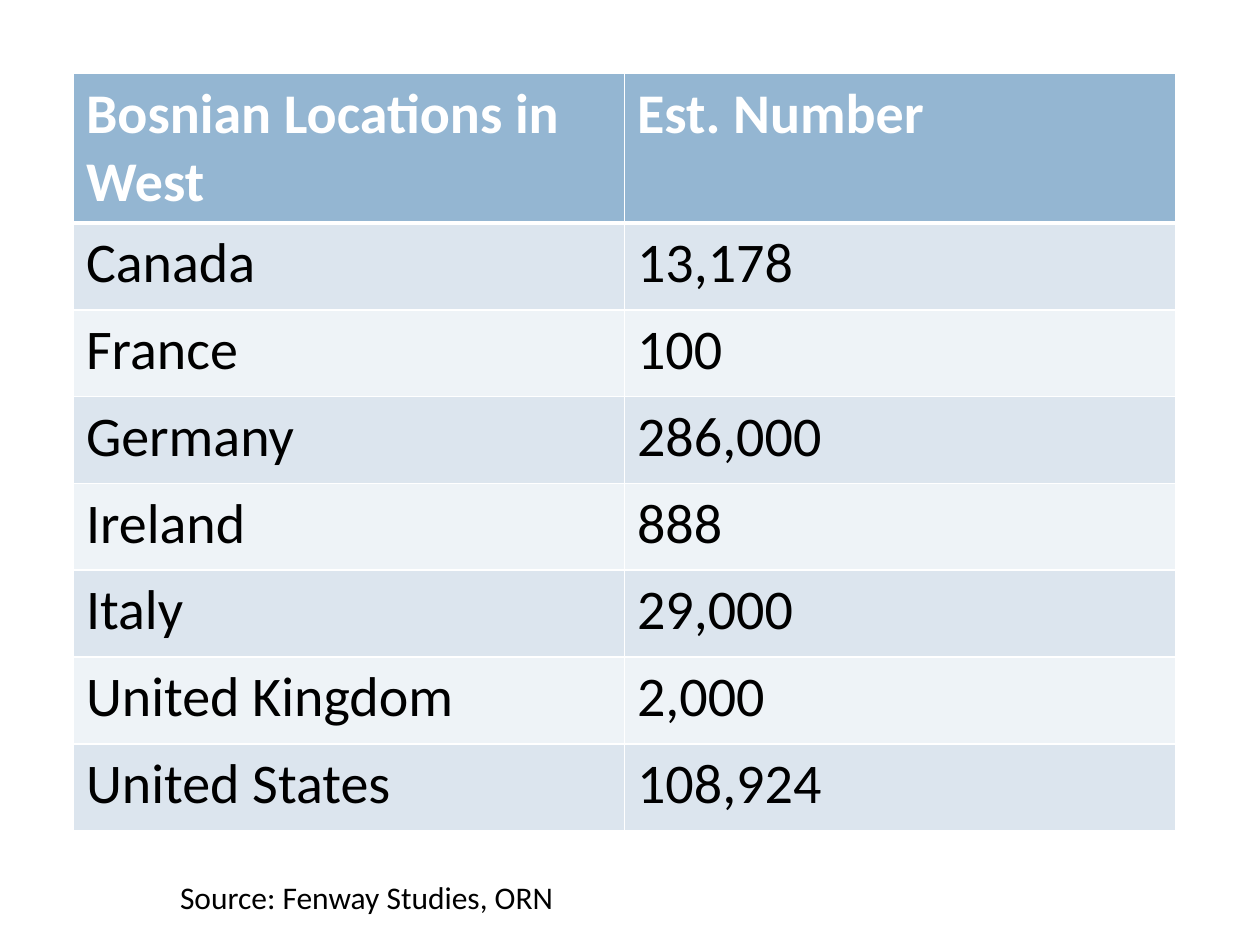
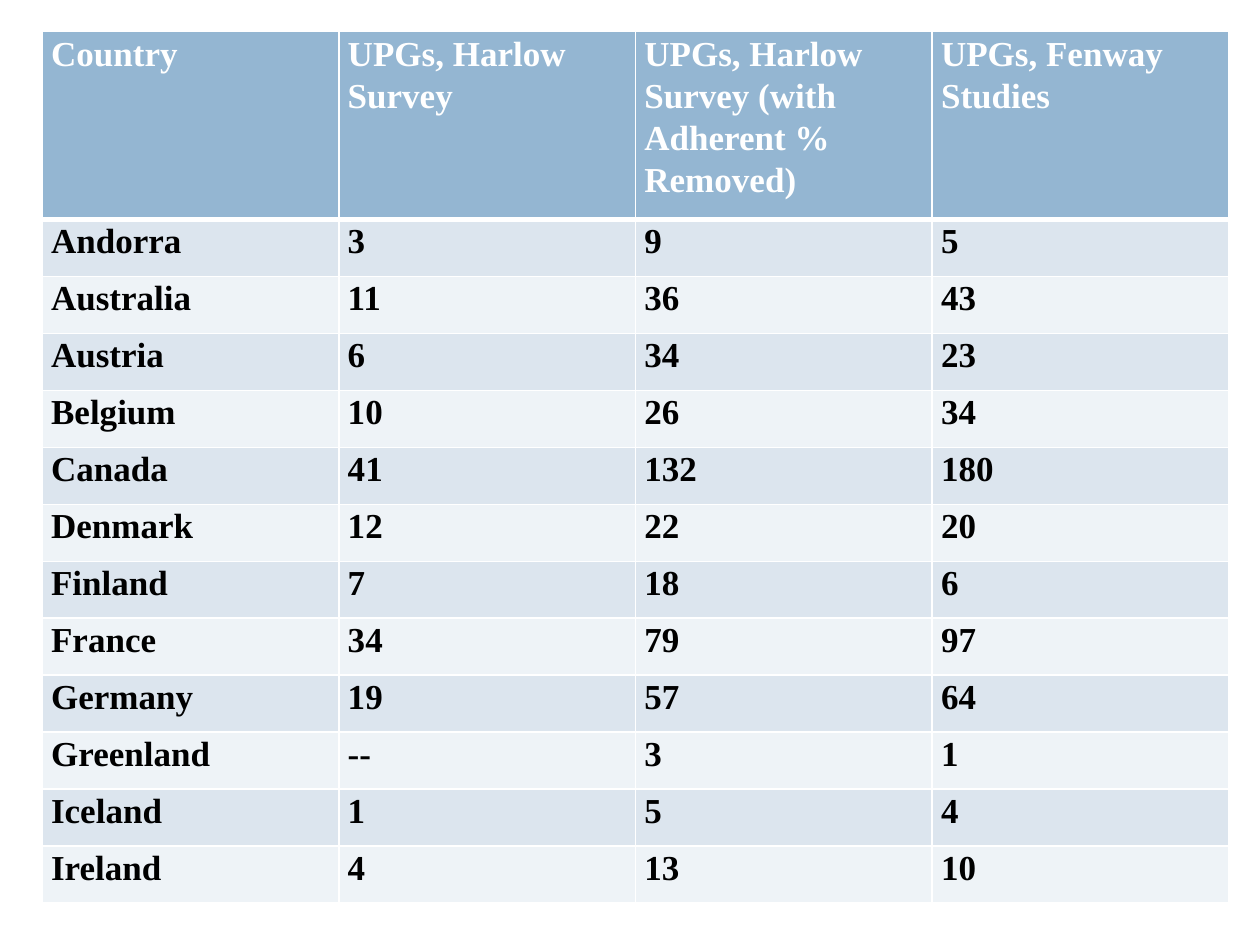
from dataclasses import dataclass

from lxml.etree import SubElement
from pptx import Presentation
from pptx.dml.color import RGBColor as RGB
from pptx.enum.text import MSO_AUTO_SIZE as AutoSize
from pptx.oxml.ns import qn
from pptx.util import Cm, Pt


@dataclass(frozen=True)
class Theme:
    white: str = "FFFFFF"
    text: str = "000000"
    header: str = "94B6D2"
    bands: tuple = ("DCE5EE", "EEF3F7")
    sans: str = "Calibri"
    serif: str = "Times New Roman"
    location_size: int = 32
    upg_size: int = 20
    upg_leading: int = 24
    source_size: int = 18
    rule: int = 1
    header_rule: int = 3


THEME = Theme()

LOCATIONS = [
    ("Bosnian Locations in West", "Est. Number"),
    ("Canada", "13,178"),
    ("France", "100"),
    ("Germany", "286,000"),
    ("Ireland", "888"),
    ("Italy", "29,000"),
    ("United Kingdom", "2,000"),
    ("United States", "108,924"),
]

UPGS = [
    ("Country", "UPGs, Harlow Survey",
     "UPGs, Harlow Survey (with Adherent % Removed)", "UPGs, Fenway Studies"),
    ("Andorra", "3", "9", "5"),
    ("Australia", "11", "36", "43"),
    ("Austria", "6", "34", "23"),
    ("Belgium", "10", "26", "34"),
    ("Canada", "41", "132", "180"),
    ("Denmark", "12", "22", "20"),
    ("Finland", "7", "18", "6"),
    ("France", "34", "79", "97"),
    ("Germany", "19", "57", "64"),
    ("Greenland", "--", "3", "1"),
    ("Iceland", "1", "5", "4"),
    ("Ireland", "4", "13", "10"),
]


def style_text(p, font, size, color, bold=False):
    p.font.name = font
    p.font.size = Pt(size)
    p.font.bold = bold
    p.font.color.rgb = RGB.from_string(color)


def set_borders(cell, row):
    """Draw thin white rules, with a thicker one between header and body."""
    widths = dict.fromkeys(("lnL", "lnR", "lnT", "lnB"), THEME.rule)
    if row == 0:
        widths["lnB"] = THEME.header_rule
    elif row == 1:
        widths["lnT"] = THEME.header_rule
    tc_pr = cell._tc.get_or_add_tcPr()
    for side, width in widths.items():
        ln = SubElement(tc_pr, qn(f"a:{side}"), w=str(Pt(width)))
        fill = SubElement(ln, qn("a:solidFill"))
        SubElement(fill, qn("a:srgbClr"), val=THEME.white)


def add_banded_table(slide, data, left, top, col_width, header_height,
                     row_height, font, size, bold=False, leading=None,
                     margins=None):
    """Add a table; margins is (horizontal, vertical) cell padding."""
    n_rows, n_cols = len(data), len(data[0])
    table = slide.shapes.add_table(
        n_rows, n_cols, left, top, col_width * n_cols,
        header_height + row_height * (n_rows - 1)).table
    for col in table.columns:
        col.width = col_width
    for i, values in enumerate(data):
        is_header = i == 0
        table.rows[i].height = header_height if is_header else row_height
        fill = THEME.header if is_header else THEME.bands[(i - 1) % 2]
        color = THEME.white if is_header else THEME.text
        for j, value in enumerate(values):
            cell = table.cell(i, j)
            cell.text = value
            p = cell.text_frame.paragraphs[0]
            style_text(p, font, size, color, bold or is_header)
            if leading:
                p.line_spacing = Pt(leading)
            if margins:
                cell.margin_left = cell.margin_right = margins[0]
                cell.margin_top = cell.margin_bottom = margins[1]
            set_borders(cell, i)
            cell.fill.solid()
            cell.fill.fore_color.rgb = RGB.from_string(fill)


def add_source(slide, text, left, top, width, height):
    tf = slide.shapes.add_textbox(left, top, width, height).text_frame
    tf.word_wrap = True
    tf.auto_size = AutoSize.SHAPE_TO_FIT_TEXT
    tf.text = text
    style_text(tf.paragraphs[0], THEME.sans, THEME.source_size, THEME.text)


def add_blank_slide(prs):
    return prs.slides.add_slide(prs.slide_layouts[6])


def main():
    prs = Presentation()
    prs.slide_width, prs.slide_height = Cm(25.4), Cm(19.05)

    slide = add_blank_slide(prs)
    add_banded_table(slide, LOCATIONS, Cm(1.48), Cm(1.48), Cm(11.11),
                     Cm(2.97), Cm(1.75), THEME.sans, THEME.location_size)
    add_source(slide, "Source: Fenway Studies, ORN",
               Cm(3.38), Cm(17.58), Cm(8.9), Cm(1.02))

    slide = add_blank_slide(prs)
    add_banded_table(slide, UPGS, Cm(0.85), Cm(0.64), Cm(5.98),
                     Cm(3.78), Cm(1.15), THEME.serif, THEME.upg_size,
                     bold=True, leading=THEME.upg_leading,
                     margins=(Cm(0.18), Cm(0)))

    prs.save("out.pptx")


if __name__ == "__main__":
    main()
